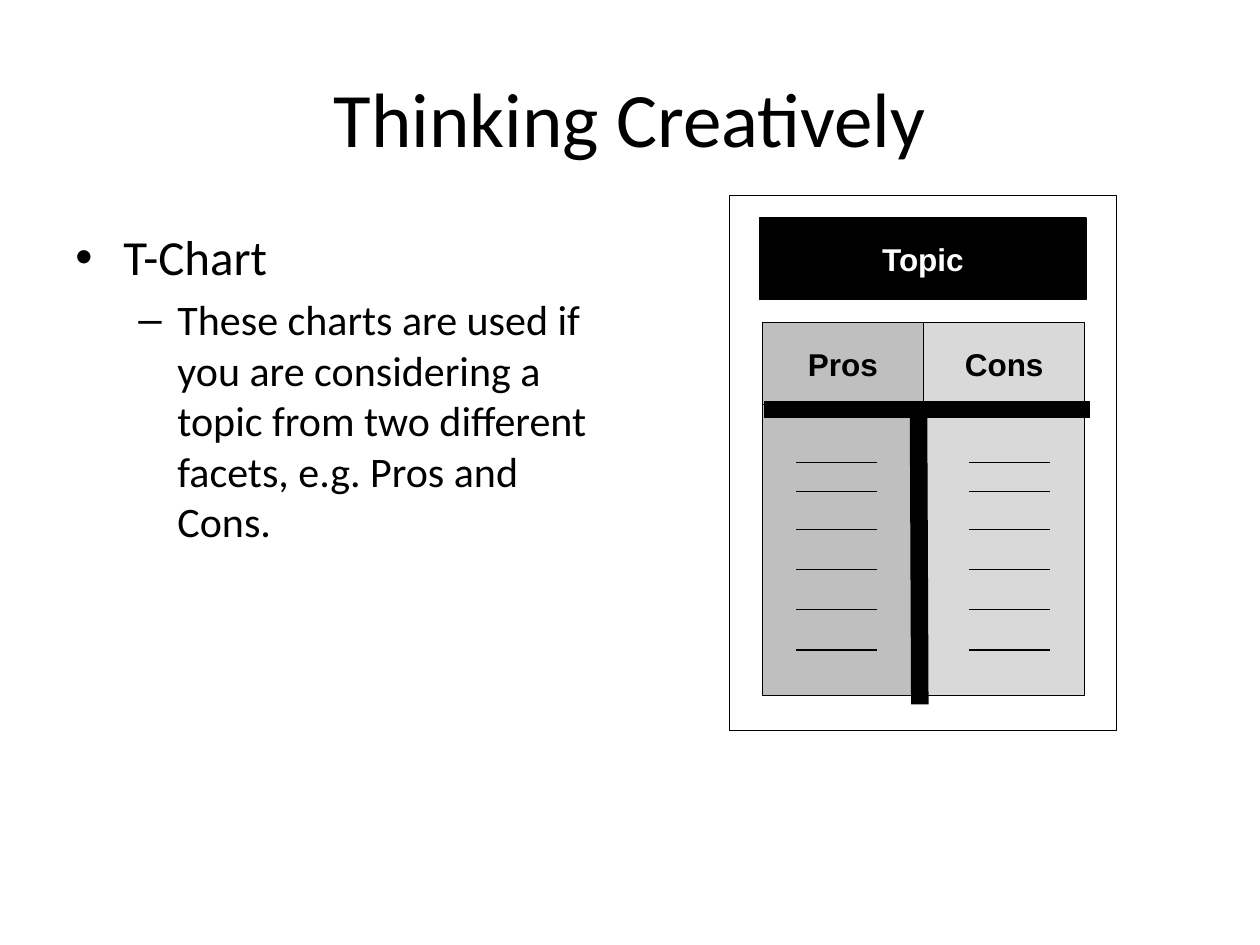
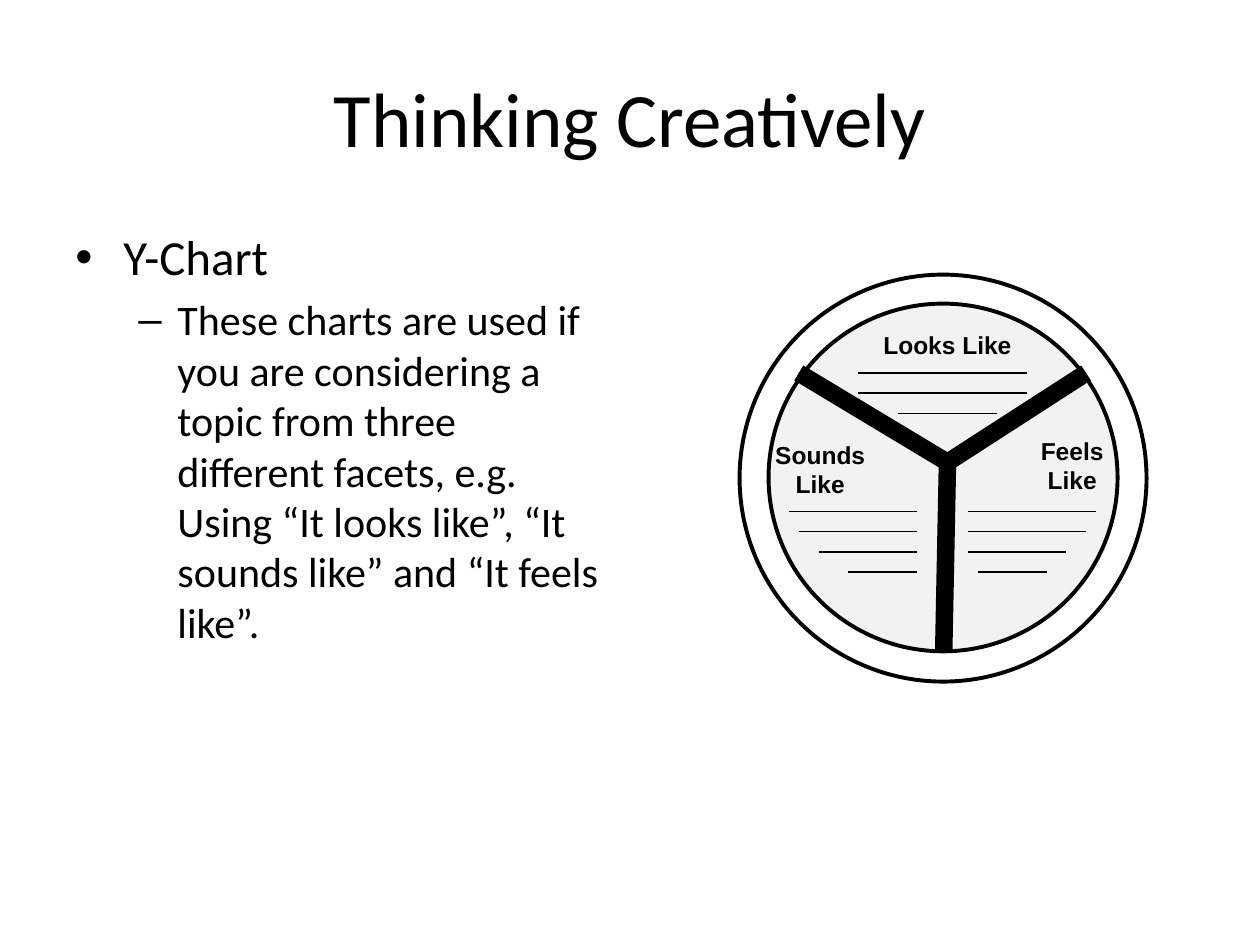
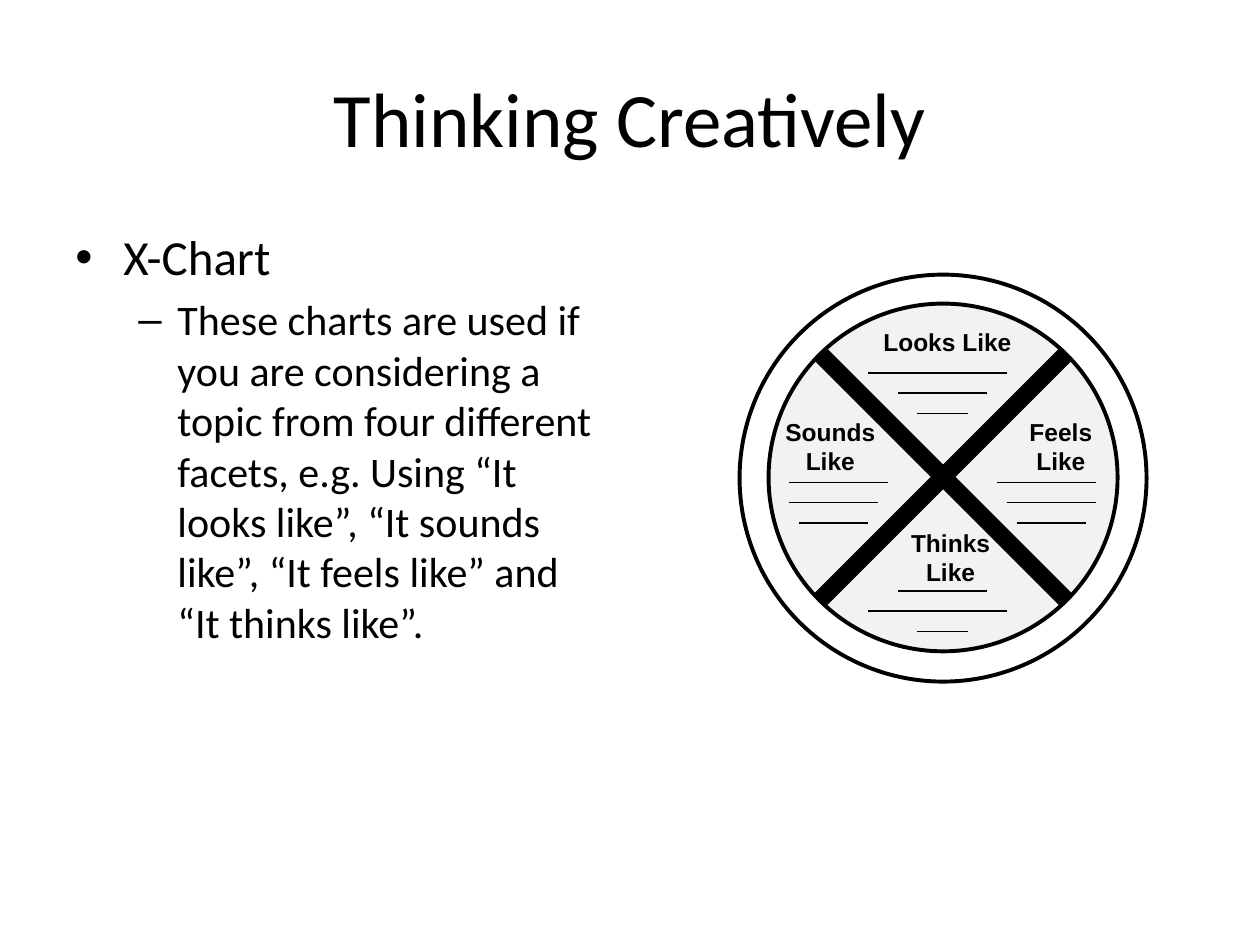
import dataclasses

import lxml.etree
import pptx
import pptx.dml.color
import pptx.enum.shapes
import pptx.enum.text
import pptx.oxml.ns
import pptx.util

Inches = pptx.util.Inches
Align = pptx.enum.text.PP_ALIGN
Anchor = pptx.enum.text.MSO_ANCHOR
Shape = pptx.enum.shapes.MSO_SHAPE


@dataclasses.dataclass(frozen=True)
class Theme:
    black: str = "000000"
    white: str = "FFFFFF"
    pros: str = "BFBFBF"
    cons: str = "D9D9D9"
    disc: str = "F2F2F2"
    body_font: str = "Calibri"
    label_font: str = "Arial"
    title_size: float = 44
    topic_size: float = 28
    detail_size: float = 24
    heading_size: float = 18
    label_size: float = 14
    thin: float = 0.75
    ring: float = 2.25
    bar: float = 10


@dataclasses.dataclass(frozen=True)
class Box:
    left: float
    top: float
    width: float
    height: float

    def inner(self, left, top, width, height):
        """A box whose place is given relative to this one."""
        return Box(self.left + left, self.top + top, width, height)

    def lengths(self):
        return [Inches(value) for value in dataclasses.astuple(self)]


THEME = Theme()
TITLE_BOX = Box(0.5, 0.3, 9, 1.25)
BODY_BOX = Box(0.5, 1.75, 4.42, 4.95)
T_BOX = Box(5.79, 1.55, 3.07, 4.25)
WHEEL_BOX = Box(5.87, 2.18, 3.23, 3.23)
MIRROR = 3.22  # left and right offsets of a mirrored rule add up to this
RULE_STEP = 0.16

TITLE = "Thinking Creatively"
T_DETAIL = ("These charts are used if you are considering a topic from two "
            "different facets, e.g. Pros and Cons.")
Y_DETAIL = ("These charts are used if you are considering a topic from three "
            "different facets, e.g. Using “It looks like”, “It sounds like” "
            "and “It feels like”.")
X_DETAIL = ("These charts are used if you are considering a topic from four "
            "different facets, e.g. Using “It looks like”, “It sounds like”, "
            "“It feels like” and “It thinks like”.")


def mirrored(spans):
    return [(MIRROR - right, MIRROR - left) for left, right in spans]


Y_LEFT = [(0.39, 1.41), (0.47, 1.41), (0.63, 1.41)]
X_LEFT = [(0.39, 1.18), (0.39, 1.1), (0.47, 1.02)]

# Spokes: x1, y1, x2, y2. Labels: text, box. Rules: first y, then x spans.
Y_WHEEL = dict(
    spokes=[(2.75, 0.78, 1.65, 1.49), (1.65, 1.49, 0.47, 0.78),
            (1.65, 1.49, 1.62, 2.99)],
    labels=[("Looks Like", (0.94, 0.39, 1.42, 0.34)),
            ("Sounds\nLike", (0.18, 1.26, 0.92, 0.57)),
            ("Feels\nLike", (2.29, 1.23, 0.7, 0.57))],
    rules=[(0.78, [(0.94, 2.28), (0.94, 2.28), (1.26, 2.04)]),
           (1.88, Y_LEFT + [(0.86, 1.41)]),
           (1.88, mirrored(Y_LEFT) + [(1.89, 2.44)])])
X_WHEEL = dict(
    spokes=[(2.59, 0.63, 0.64, 2.58), (0.64, 0.63, 2.59, 2.58)],
    labels=[("Thinks\nLike", (1.26, 1.96, 0.83, 0.57)),
            ("Looks Like", (0.94, 0.37, 1.42, 0.34)),
            ("Sounds\nLike", (0.26, 1.08, 0.92, 0.57)),
            ("Feels\nLike", (2.2, 1.08, 0.7, 0.57))],
    rules=[(0.78, [(1.02, 2.12), (1.26, 1.96), (1.41, 1.81)]),
           (2.51, [(1.26, 1.96), (1.02, 2.12), (1.41, 1.81)]),
           (1.65, X_LEFT),
           (1.65, mirrored(X_LEFT))])


def rgb(color):
    return pptx.dml.color.RGBColor.from_string(color)


def add_bullet(para, mark, margin, hanging):
    properties = para._p.get_or_add_pPr()
    properties.set("marL", str(Inches(margin)))
    properties.set("indent", str(-Inches(hanging)))
    for tag, name, value in (("a:buFont", "typeface", THEME.label_font),
                             ("a:buChar", "char", mark)):
        child = lxml.etree.SubElement(properties, pptx.oxml.ns.qn(tag))
        child.set(name, value)


def write(frame, text, *, size, font=THEME.label_font, color=THEME.black,
          bold=False, align=Align.CENTER, anchor=Anchor.TOP, wrap=True,
          bullet=None, space_before=None):
    """Append one paragraph for each line of the text."""
    frame.word_wrap = wrap
    frame.vertical_anchor = anchor
    for line in text.split("\n"):
        para = frame.add_paragraph() if frame.text else frame.paragraphs[0]
        if bullet:
            add_bullet(para, *bullet)
        para.alignment = align
        if space_before is not None:
            para.space_before = pptx.util.Pt(space_before)
        span = para.add_run()
        span.text = line
        span.font.size = pptx.util.Pt(size)
        span.font.name = font
        span.font.bold = bold
        span.font.color.rgb = rgb(color)


def add_figure(shapes, kind, box, fill, line_width=THEME.thin):
    figure = shapes.add_shape(kind, *box.lengths())
    figure.shadow.inherit = False
    figure.fill.solid()
    figure.fill.fore_color.rgb = rgb(fill)
    figure.line.color.rgb = rgb(THEME.black)
    figure.line.width = pptx.util.Pt(line_width)
    return figure


def add_line(shapes, box, x1, y1, x2, y2, width=THEME.thin):
    line = shapes.add_connector(
        pptx.enum.shapes.MSO_CONNECTOR.STRAIGHT,
        Inches(box.left + x1), Inches(box.top + y1),
        Inches(box.left + x2), Inches(box.top + y2))
    line.line.color.rgb = rgb(THEME.black)
    line.line.width = pptx.util.Pt(width)
    lxml.etree.SubElement(line._element.spPr, pptx.oxml.ns.qn("a:effectLst"))


def add_title(page, box):
    frame = page.shapes.add_textbox(*box.lengths()).text_frame
    write(frame, TITLE, size=THEME.title_size, font=THEME.body_font,
          anchor=Anchor.MIDDLE)


def add_body(page, box, topic, detail):
    frame = page.shapes.add_textbox(*box.lengths()).text_frame
    write(frame, topic, size=THEME.topic_size, font=THEME.body_font,
          align=Align.LEFT, bullet=("•", 0.38, 0.38))
    write(frame, detail, size=THEME.detail_size, font=THEME.body_font,
          align=Align.LEFT, bullet=("–", 0.81, 0.31),
          space_before=0.2 * THEME.detail_size)


def add_heading(shapes, box, text, fill, color=THEME.black):
    cell = add_figure(shapes, Shape.RECTANGLE, box, fill)
    write(cell.text_frame, text, size=THEME.heading_size, color=color,
          bold=True, anchor=Anchor.MIDDLE)


def add_t_chart(page, box):
    shapes = page.shapes.add_group_shape().shapes
    add_figure(shapes, Shape.RECTANGLE, box, THEME.white)
    add_heading(shapes, box.inner(0.24, 0.18, 2.59, 0.65), "Topic",
                THEME.black, THEME.white)

    # Two columns, each a heading above a writing area
    column_width = 1.28
    columns = [("Pros", THEME.pros), ("Cons", THEME.cons)]
    for index, (text, fill) in enumerate(columns):
        left = 0.26 + index * column_width
        add_heading(shapes, box.inner(left, 1.01, column_width, 0.65),
                    text, fill)
        add_figure(shapes, Shape.RECTANGLE,
                   box.inner(left, 1.66, column_width, 2.31), fill)

    # The heavy T
    add_line(shapes, box, 1.5, 1.7, 1.51, 4.04, THEME.bar)
    add_line(shapes, box, 0.27, 1.7, 2.86, 1.7, THEME.bar)

    # Writing lines
    rule_tops = [2.12, 2.35] + [2.65 + 0.32 * row for row in range(4)]
    for left in (0.53, 1.9):
        for top in rule_tops:
            add_line(shapes, box, left, top, left + 0.64, top)


def add_wheel(page, box, spokes, labels, rules):
    shapes = page.shapes.add_group_shape().shapes
    add_figure(shapes, Shape.OVAL, box, THEME.white, THEME.ring)
    add_figure(shapes, Shape.OVAL, box.inner(0.23, 0.23, 2.77, 2.76),
               THEME.disc, THEME.ring)
    for spoke in spokes:
        add_line(shapes, box, *spoke, THEME.bar)
    for text, place in labels:
        frame = shapes.add_textbox(*box.inner(*place).lengths()).text_frame
        write(frame, text, size=THEME.label_size, bold=True,
              wrap="\n" not in text)
        frame.auto_size = pptx.enum.text.MSO_AUTO_SIZE.SHAPE_TO_FIT_TEXT
    for first, spans in rules:
        for row, (left, right) in enumerate(spans):
            top = first + row * RULE_STEP
            add_line(shapes, box, left, top, right, top)


def add_page(deck, topic, detail):
    page = deck.slides.add_slide(deck.slide_layouts[6])
    add_title(page, TITLE_BOX)
    add_body(page, BODY_BOX, topic, detail)
    return page


def main():
    deck = pptx.Presentation()
    deck.slide_width, deck.slide_height = Inches(10), Inches(7.5)
    add_t_chart(add_page(deck, "T-Chart", T_DETAIL), T_BOX)
    add_wheel(add_page(deck, "Y-Chart", Y_DETAIL), WHEEL_BOX, **Y_WHEEL)
    add_wheel(add_page(deck, "X-Chart", X_DETAIL), WHEEL_BOX, **X_WHEEL)
    deck.save("out.pptx")


if __name__ == "__main__":
    main()
